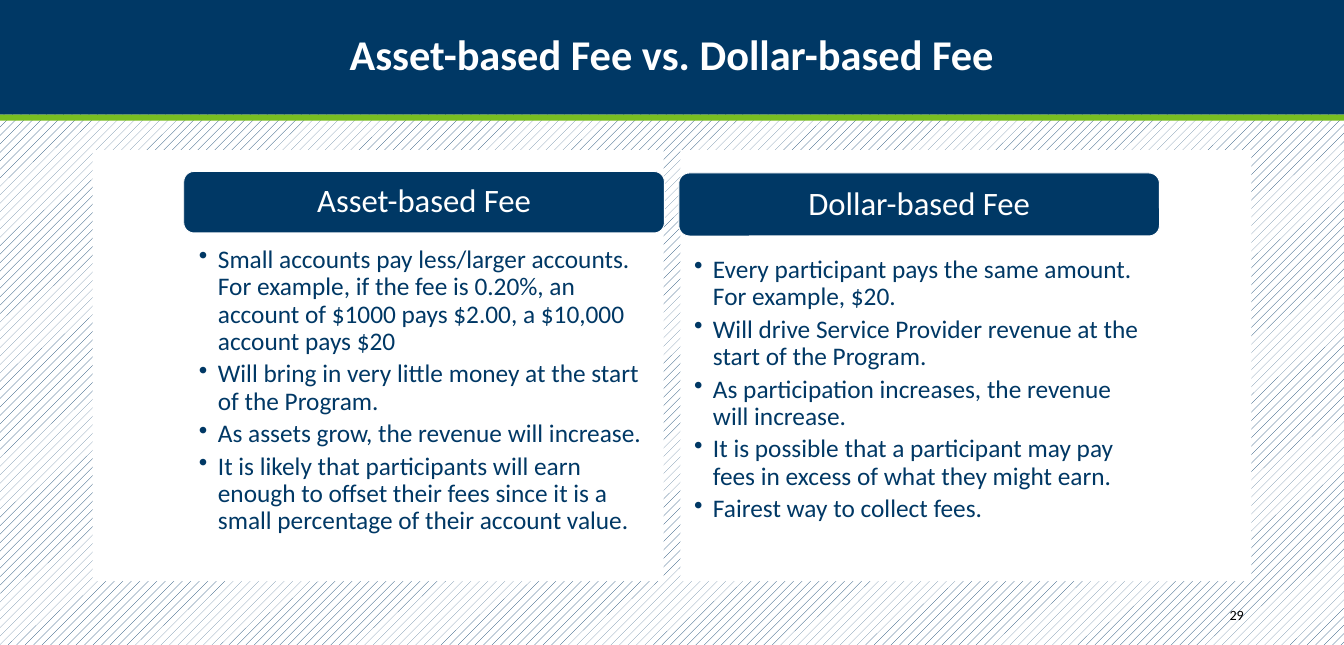
import pptx
import pptx.util
import pptx.dml.color
import pptx.enum.dml
import pptx.enum.shapes
import pptx.enum.text
import lxml.etree

Inches, Pt = pptx.util.Inches, pptx.util.Pt
RGBColor = pptx.dml.color.RGBColor
SHAPE = pptx.enum.shapes.MSO_SHAPE
ALIGN = pptx.enum.text.PP_ALIGN
ANCHOR = pptx.enum.text.MSO_ANCHOR

NAVY = RGBColor(0x00, 0x38, 0x65)
GREEN = RGBColor(0x78, 0xBE, 0x21)
WHITE = RGBColor(0xFF, 0xFF, 0xFF)
BLACK = RGBColor(0x00, 0x00, 0x00)

WIDTH, HEIGHT = 17.7, 8.5
MARGIN = 1.22
BANNER_H, RULE_H = 1.51, 0.08
PANEL_Y, PANEL_W, PANEL_H = 1.98, 7.52, 5.68
COLUMN_W = 6.33

# Header box and list box: top and height within the panel, then list insets
FEES = [
    dict(heading="Asset-based Fee", x=2.42, header=(0.28, 0.81),
         body=(1.23, 4.0), insets=(0.2, 0.04, 0.24, 0.04),
         points=["Small accounts pay less/larger accounts. For example, if the fee "
                 "is 0.20%, an account of $1000 pays $2.00, a $10,000 account pays $20",
                 "Will bring in very little money at the start of the Program.",
                 "As assets grow, the revenue will increase.",
                 "It is likely that participants will earn enough to offset their fees "
                 "since it is a small percentage of their account value."]),
    dict(heading="Dollar-based Fee", x=8.94, header=(0.3, 0.83),
         body=(1.37, 3.75), insets=(0.2, 0.03, 0.19, 0.03),
         points=["Every participant pays the same amount. For example, $20.",
                 "Will drive Service Provider revenue at the start of the Program.",
                 "As participation increases, the revenue will increase.",
                 "It is possible that a participant may pay fees in excess of what "
                 "they might earn.",
                 "Fairest way to collect fees."]),
]


def add_bullet(p):
    pPr = p._p.get_or_add_pPr()
    pPr.set("marL", str(Inches(0.25)))
    pPr.set("indent", str(-Inches(0.25)))
    bu = lxml.etree.SubElement(pPr, pptx.oxml.ns.qn("a:buChar"))
    bu.set("char", "•")


def write(sp, paragraphs, size, color, bold=False, align=ALIGN.CENTER,
          anchor=ANCHOR.MIDDLE, insets=(0.1, 0.05, 0.1, 0.05), spacing=0.9,
          after=0, bullets=False):
    tf = sp.text_frame
    tf.word_wrap = True
    tf.auto_size = pptx.enum.text.MSO_AUTO_SIZE.NONE
    tf.vertical_anchor = anchor
    tf.margin_left, tf.margin_top, tf.margin_right, tf.margin_bottom = map(Inches, insets)
    for i, text in enumerate(paragraphs):
        p = tf.add_paragraph() if i else tf.paragraphs[0]
        p.alignment = align
        p.line_spacing = spacing
        p.space_before, p.space_after = Pt(0), Pt(after)
        if bullets:
            add_bullet(p)
        r = p.add_run()
        r.text = text
        r.font.name, r.font.size, r.font.bold = "Calibri", Pt(size), bold
        r.font.color.rgb = color


def add_box(slide, box, fill, kind=SHAPE.RECTANGLE, line=None):
    sp = slide.shapes.add_shape(kind, *map(Inches, box))
    sp.shadow.inherit = False
    sp.fill.solid()
    sp.fill.fore_color.rgb = fill
    if line is None:
        sp.line.fill.background()
    else:
        sp.line.color.rgb = line
        sp.line.width = Pt(0.85)
    return sp


def add_background(slide):
    fill = slide.background.fill
    fill.patterned()
    fill.pattern = pptx.enum.dml.MSO_PATTERN.PERCENT_10
    fill.fore_color.rgb = NAVY
    fill.back_color.rgb = WHITE


def add_banner(slide, text):
    add_box(slide, (0, 0, WIDTH, BANNER_H), NAVY)
    add_box(slide, (0, BANNER_H, WIDTH, RULE_H), GREEN)
    title = slide.shapes.title
    title.left, title.top = Inches(MARGIN), 0
    title.width, title.height = Inches(WIDTH - 2 * MARGIN), Inches(BANNER_H)
    write(title, [text], 40.2, WHITE, bold=True, insets=(0, 0.2, 0, 0.2))
    # Bring the title in front of the banner
    slide.shapes._spTree.append(title._element)


def add_fee(slide, panel, fee):
    add_box(slide, panel, WHITE)
    top = panel[1]

    # Rounded heading
    y, h = fee["header"]
    header = add_box(slide, (fee["x"], top + y, COLUMN_W, h), NAVY,
                     SHAPE.ROUNDED_RECTANGLE, WHITE)
    write(header, [fee["heading"]], 31, WHITE, insets=(0.13,) * 4)

    # Bulleted list
    y, h = fee["body"]
    body = slide.shapes.add_textbox(*map(Inches, (fee["x"], top + y, COLUMN_W, h)))
    write(body, fee["points"], 24, NAVY, align=ALIGN.LEFT, anchor=ANCHOR.TOP,
          insets=fee["insets"], after=5, bullets=True)


def add_page_number(slide, box, number):
    sp = slide.shapes.add_textbox(*map(Inches, box))
    write(sp, [number], 13.4, BLACK, align=ALIGN.RIGHT, spacing=1.0)


def main():
    prs = pptx.Presentation()
    prs.slide_width, prs.slide_height = Inches(WIDTH), Inches(HEIGHT)
    slide = prs.slides.add_slide(prs.slide_layouts.get_by_name("Title Only"))
    add_background(slide)
    add_banner(slide, "Asset-based Fee vs. Dollar-based Fee")
    right_x = WIDTH - MARGIN - PANEL_W
    for x, fee in zip((MARGIN, right_x), FEES):
        add_fee(slide, (x, PANEL_Y, PANEL_W, PANEL_H), fee)
    add_page_number(slide, (WIDTH - MARGIN - 2.12, 7.88, 2.12, 0.45), "29")
    prs.save("out.pptx")


if __name__ == "__main__":
    main()
